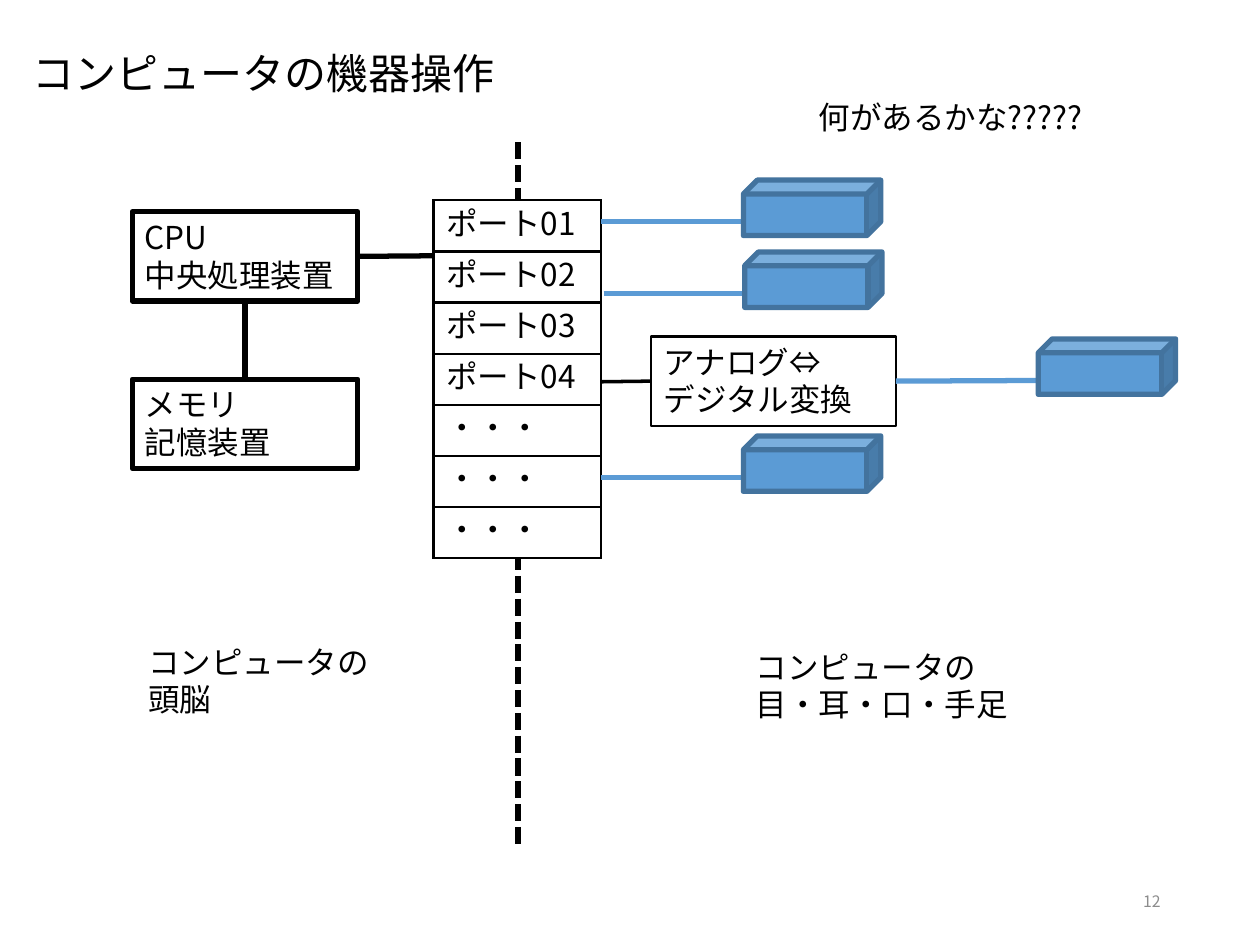
from typing import NamedTuple, Optional

from lxml.etree import SubElement
from pptx import Presentation
from pptx.dml.color import RGBColor
from pptx.enum.dml import MSO_LINE
from pptx.enum.shapes import MSO_CONNECTOR, MSO_SHAPE
from pptx.enum.text import MSO_ANCHOR, PP_ALIGN
from pptx.oxml import parse_xml
from pptx.oxml.ns import nsdecls, qn
from pptx.util import Inches, Pt

FONT = "Noto Sans CJK JP"
BLACK, WHITE, GRAY = "000000", "FFFFFF", "8C8C8C"
BLUE, EDGE = "5B9BD5", "43739E"
TOP, LEFT, BOTTOM, RIGHT = range(4)
PORTS = ["ポート01", "ポート02", "ポート03", "ポート04"] + ["・・・"] * 3


class Box(NamedTuple):
    x: float
    y: float
    w: float
    h: float

    def inches(self):
        return [Inches(n) for n in self]


class Device(NamedTuple):
    x: float
    y: float
    start: float


class Note(NamedTuple):
    text: str
    box: Box


DEVICES = [Device(5.9, 1.43, 4.77), Device(5.91, 2.0, 4.79),
           Device(8.24, 2.69, 7.11), Device(5.9, 3.46, 4.77)]
NOTES = [Note("コンピュータの頭脳", Box(1.08, 5.05, 2.1, 0.71)),
         Note("コンピュータの目・耳・口・手足", Box(5.9, 5.09, 2.33, 0.71)),
         Note("何があるかな?????", Box(6.4, 0.73, 2.72, 0.4))]


def color(code: str) -> RGBColor:
    return RGBColor.from_string(code)


def write(frame, text: str, *, size: float = 18, ink: str = BLACK,
          align=PP_ALIGN.LEFT, anchor=MSO_ANCHOR.TOP) -> None:
    frame.word_wrap = True
    frame.vertical_anchor = anchor
    para = frame.paragraphs[0]
    para.text = text
    para.alignment = align
    para.line_spacing = Pt(size * 1.2)
    for run in para.runs:
        run.font.name = FONT
        run.font.size = Pt(size)
        run.font.color.rgb = color(ink)
        SubElement(run.font._element, qn("a:ea"), typeface=FONT)


def add_note(slide, text: str, box: Box, **style) -> None:
    write(slide.shapes.add_textbox(*box.inches()).text_frame, text, **style)


def add_solid(slide, kind, box: Box, fill: Optional[str] = None,
              edge: Optional[str] = None, width: float = 3):
    """Add a preset shape; a missing fill or edge is left clear."""
    shape = slide.shapes.add_shape(kind, *box.inches())
    shape.shadow.inherit = False
    if fill:
        shape.fill.solid()
        shape.fill.fore_color.rgb = color(fill)
    else:
        shape.fill.background()
    if edge:
        shape.line.color.rgb = color(edge)
        shape.line.width = Pt(width)
    else:
        shape.line.fill.background()
    return shape


def add_unit(slide, text: str, box: Box, width: float = 3):
    unit = add_solid(slide, MSO_SHAPE.RECTANGLE, box, edge=BLACK, width=width)
    write(unit.text_frame, text)
    return unit


def add_line(slide, x1: float, y1: float, x2: float, y2: float,
             ink: str = BLACK, width: float = 3):
    line = slide.shapes.add_connector(
        MSO_CONNECTOR.STRAIGHT, *[Inches(n) for n in (x1, y1, x2, y2)])
    line.line.color.rgb = color(ink)
    line.line.width = Pt(width)
    SubElement(line._element.spPr, qn("a:effectLst"))
    return line


def add_border(cell, width: float = 1.5) -> None:
    props = cell._tc.get_or_add_tcPr()
    for spot, side in enumerate("LRTB"):
        props.insert(spot, parse_xml(
            f'<a:ln{side} {nsdecls("a")} w="{Pt(width)}"><a:solidFill>'
            f'<a:srgbClr val="{BLACK}"/></a:solidFill></a:ln{side}>'))


def add_ports(slide, box: Box) -> None:
    table = slide.shapes.add_table(len(PORTS), 1, *box.inches()).table
    table.first_row = table.horz_banding = False
    for row, port in enumerate(PORTS):
        cell = table.cell(row, 0)
        cell.fill.solid()
        cell.fill.fore_color.rgb = color(WHITE)
        add_border(cell)
        write(cell.text_frame, port)


def add_device(slide, device: Device):
    """Draw a cube and the wire to its left side; return the wire."""
    x, y, start = device
    wire = add_line(slide, start, y + 0.33, x, y + 0.33, BLUE)
    add_solid(slide, MSO_SHAPE.CUBE, Box(x, y, 1.09, 0.44), BLUE, EDGE)
    return wire


def main() -> None:
    deck = Presentation()
    deck.slide_width, deck.slide_height = Inches(10), Inches(7.5)
    slide = deck.slides.add_slide(deck.slide_layouts[6])

    title = add_solid(slide, MSO_SHAPE.ROUNDED_RECTANGLE,
                      Box(0, 0.29, 7.76, 0.58))
    title.text_frame.margin_left = Inches(0.23)
    write(title.text_frame, "コンピュータの機器操作", size=24,
          anchor=MSO_ANCHOR.MIDDLE)
    add_note(slide, "12", Box(7.06, 6.95, 2.25, 0.4), size=9, ink=GRAY,
             align=PP_ALIGN.RIGHT, anchor=MSO_ANCHOR.MIDDLE)

    cpu = add_unit(slide, "CPU\n中央処理装置", Box(1.05, 1.68, 1.79, 0.71))
    memory = add_unit(slide, "メモリ\n記憶装置", Box(1.05, 3.01, 1.79, 0.71))
    bus = add_line(slide, 1.94, 2.39, 1.94, 3.01)
    bus.begin_connect(cpu, BOTTOM)
    bus.end_connect(memory, TOP)
    add_line(slide, 2.84, 2.03, 3.44, 2.03).begin_connect(cpu, RIGHT)

    border = add_line(slide, 4.11, 1.13, 4.11, 6.71, width=3.25)
    border.line.dash_style = MSO_LINE.SQUARE_DOT
    add_ports(slide, Box(3.44, 1.59, 1.33, 2.84))

    for note in NOTES:
        add_note(slide, note.text, note.box)

    adapter = add_unit(slide, "アナログ⇔\nデジタル変換",
                       Box(5.17, 2.67, 1.94, 0.71), 1.25)
    link = add_line(slide, 4.77, 3.03, 5.17, 3.03, width=2)
    link.end_connect(adapter, LEFT)
    wires = [add_device(slide, device) for device in DEVICES]
    wires[2].begin_connect(adapter, RIGHT)

    deck.save("out.pptx")


if __name__ == "__main__":
    main()
